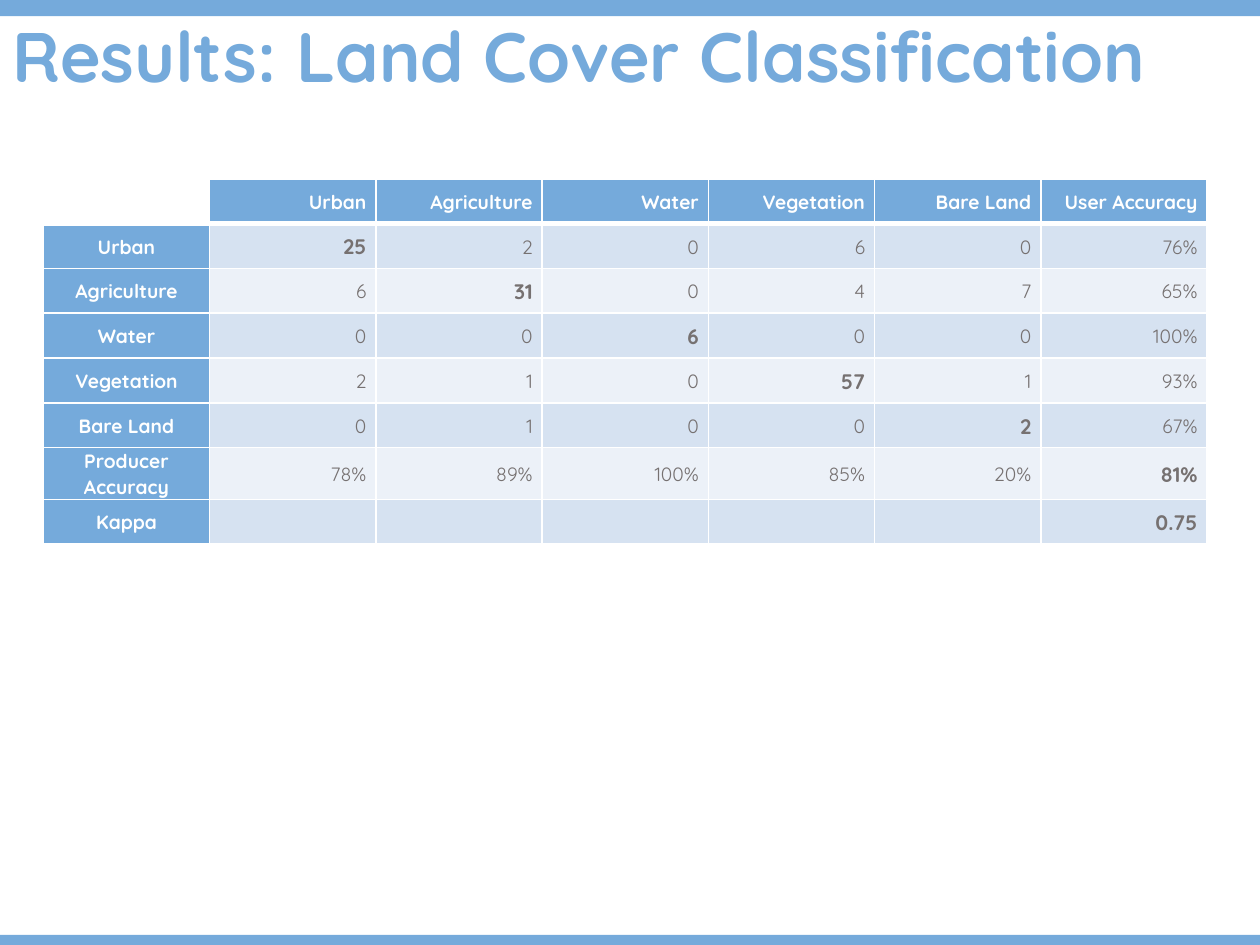
from lxml import etree
from pptx import Presentation
from pptx import util as u
from pptx.dml.color import RGBColor
from pptx.enum import shapes, text
from pptx.oxml.ns import qn

BLUE = RGBColor(0x75, 0xAA, 0xDB)
GREY = RGBColor(0x76, 0x71, 0x71)
WHITE = RGBColor(0xFF, 0xFF, 0xFF)
BANDS = (RGBColor(0xEC, 0xF1, 0xF8), RGBColor(0xD6, 0xE2, 0xF1))
FONT = "Quicksand"

WIDTH, HEIGHT = 720, 540
COLUMN_WIDTH, ROW_HEIGHT = 95, 25.6

CLASSES = ["Urban", "Agriculture", "Water", "Vegetation", "Bare Land"]
ROWS = [
    ["", *CLASSES, "User Accuracy"],
    ["Urban", "25", "2", "0", "6", "0", "76%"],
    ["Agriculture", "6", "31", "0", "4", "7", "65%"],
    ["Water", "0", "0", "6", "0", "0", "100%"],
    ["Vegetation", "2", "1", "0", "57", "1", "93%"],
    ["Bare Land", "0", "1", "0", "0", "2", "67%"],
    ["Producer Accuracy", "78%", "89%", "100%", "85%", "20%", "81%"],
    ["Kappa", "", "", "", "", "", "0.75"],
]


def write(frame, words, size, color, bold=True, align=text.PP_ALIGN.LEFT, spacing=None):
    para = frame.paragraphs[0]
    para.alignment = align
    para.line_spacing = spacing
    span = para.add_run()
    span.text = words
    span.font.name = FONT
    span.font.size = u.Pt(size)
    span.font.bold = bold
    span.font.color.rgb = color


def add_bar(page, top, height):
    bar = page.shapes.add_shape(
        shapes.MSO_SHAPE.RECTANGLE, 0, u.Pt(top), u.Pt(WIDTH), u.Pt(height))
    bar.shadow.inherit = False
    bar.fill.solid()
    bar.fill.fore_color.rgb = BLUE
    bar.line.fill.background()


def add_title(page, words):
    box = page.shapes.add_textbox(0, u.Pt(3.6), u.Pt(WIDTH), u.Pt(55.4))
    box.text_frame.word_wrap = True
    box.text_frame.auto_size = text.MSO_AUTO_SIZE.SHAPE_TO_FIT_TEXT
    write(box.text_frame, words, 40, BLUE)


def set_borders(cell, **widths):
    """Draw white borders; keys are the sides L, R, T and B, widths in points."""
    properties = cell._tc.get_or_add_tcPr()
    for index, side in enumerate("LRTB"):
        line = etree.Element(qn(f"a:ln{side}"), w=str(u.Pt(widths.get(side, 1))))
        fill = etree.SubElement(line, qn("a:solidFill"))
        etree.SubElement(fill, qn("a:srgbClr"), val=str(WHITE))
        properties.insert(index, line)


def format_cell(cell, words, row, column):
    heading = row == 0 or column == 0
    cell.vertical_anchor = text.MSO_ANCHOR.MIDDLE
    cell.margin_left = cell.margin_right = u.Pt(5.4)
    cell.margin_top = cell.margin_bottom = 0

    if row == column == 0:
        cell.fill.background()
    else:
        cell.fill.solid()
        cell.fill.fore_color.rgb = BLUE if heading else BANDS[row % 2]

    # The header is set off by a thicker rule
    set_borders(cell, **{0: {"B": 3}, 1: {"T": 3}}.get(row, {}))

    if words:
        # Correct counts on the diagonal and the overall scores stand out
        key = not heading and (row == column or (row > 5 and column > 5))
        write(cell.text_frame, words, 12 if key else 11,
              WHITE if heading else GREY, bold=heading or key, spacing=1.07,
              align=text.PP_ALIGN.RIGHT if column else text.PP_ALIGN.CENTER)


def add_matrix(page, rows):
    count, columns = len(rows), len(rows[0])
    table = page.shapes.add_table(
        count, columns, u.Pt(24.8), u.Pt(102.2),
        u.Pt(columns * COLUMN_WIDTH), u.Pt(count * ROW_HEIGHT)).table
    table.first_row = table.horz_banding = False
    for column in table.columns:
        column.width = u.Pt(COLUMN_WIDTH)
    for row, values in enumerate(rows):
        table.rows[row].height = u.Pt(ROW_HEIGHT)
        for column, words in enumerate(values):
            format_cell(table.cell(row, column), words, row, column)


def main():
    deck = Presentation()
    deck.slide_width, deck.slide_height = u.Pt(WIDTH), u.Pt(HEIGHT)
    page = deck.slides.add_slide(deck.slide_layouts[6])

    # Bars along the top and bottom edges
    add_bar(page, 0, 9.2)
    add_bar(page, HEIGHT - 5.8, 5.8)

    # Confusion matrix and title
    add_matrix(page, ROWS)
    add_title(page, "Results: Land Cover Classification")

    deck.save("out.pptx")


if __name__ == "__main__":
    main()
